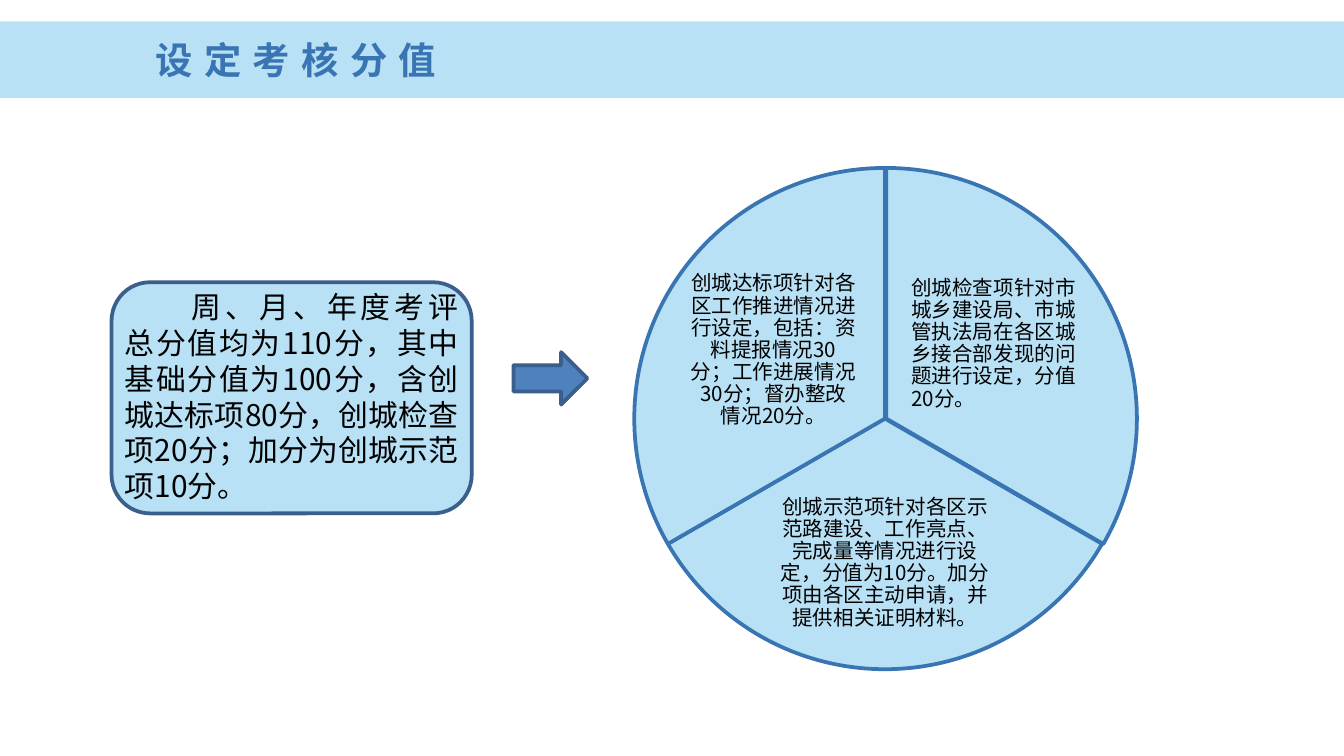
from pptx import Presentation
from pptx import util as u
from pptx.dml.color import RGBColor
from pptx.enum import shapes, text
from pptx.oxml.ns import qn
from lxml import etree

FONT = "Noto Sans CJK SC"
PALE, BLUE, NAVY, ARROW, BLACK = "B9E1F5", "3975B2", "3A5F8C", "4F81BD", "000000"
SHAPE = shapes.MSO_SHAPE
ALIGN = text.PP_ALIGN
SLIDE_WIDTH = 10
SLIDE_HEIGHT = SLIDE_WIDTH * 9 / 16

SUMMARY = ("周、月、年度考评总分值均为110分，其中基础分值为100分，含创城达标项80分，"
           "创城检查项20分；加分为创城示范项10分。")

# Start angle, sector shift, text box relative to the wheel, alignment, wording
SECTORS = [
    (270, 0.01, (2.04, 0.69, 1.27, 1.24), ALIGN.LEFT,
     "创城检查项针对市城乡建设局、市城管执法局在各区城乡接合部发现的问题进行设定，分值20分。"),
    (30, 0, (1.02, 2.36, 1.69, 1.16), ALIGN.CENTER,
     "创城示范项针对各区示范路建设、工作亮点、完成量等情况进行设定，分值为10分。"
     "加分项由各区主动申请，并提供相关证明材料。"),
    (150, 0, (0.4, 0.74, 1.27, 1.24), ALIGN.CENTER,
     "创城达标项针对各区工作推进情况进行设定，包括：资料提报情况30分；"
     "工作进展情况30分；督办整改情况20分。"),
]


def rgb(value):
    return RGBColor.from_string(value)


def inches(box):
    return [u.Inches(length) for length in box]


def add_figure(slide, preset, box, fill, line=None):
    figure = slide.shapes.add_shape(preset, *inches(box))
    figure.shadow.inherit = False
    figure.fill.solid()
    figure.fill.fore_color.rgb = rgb(fill)
    if line:
        figure.line.color.rgb = rgb(line)
        figure.line.width = u.Pt(2)
    else:
        figure.line.fill.background()
    return figure


def add_words(slide, box, words, size, color=BLACK, bold=False,
              frame_format=None, paragraph_format=None):
    """Add a text box; return its paragraph and its run properties."""
    frame = slide.shapes.add_textbox(*inches(box)).text_frame
    frame.word_wrap = True
    paragraph = frame.paragraphs[0]
    run = paragraph.add_run()
    run.text = words
    font_format = {"size": u.Pt(size), "bold": bold, "name": FONT}
    for target, values in ((frame, frame_format), (paragraph, paragraph_format),
                           (run.font, font_format)):
        for name, value in (values or {}).items():
            setattr(target, name, value)
    run.font.color.rgb = rgb(color)
    properties = run._r.get_or_add_rPr()
    properties.find(qn("a:latin")).addnext(
        etree.Element(qn("a:ea"), typeface=FONT))
    return paragraph, properties


def add_title_band(slide, box):
    left, top, _, _ = box
    add_figure(slide, SHAPE.RECTANGLE, box, PALE)
    _, properties = add_words(slide, (left + 1.06, top + 0.07, 2.52, 0.44),
                              "设定考核分值", 20, BLUE, True)
    properties.set("spc", "600")


def add_summary(slide, box):
    add_figure(slide, SHAPE.ROUNDED_RECTANGLE, box, PALE, NAVY)
    paragraph, _ = add_words(slide, box, SUMMARY, 16,
                             paragraph_format={"alignment": ALIGN.JUSTIFY})
    paragraph._p.get_or_add_pPr().set("indent", str(u.Inches(0.5)))


def add_wheel(slide, box):
    """Three equal sectors of a circle, each with its own text."""
    left, top, size, _ = box
    margins = dict.fromkeys(
        ("margin_left", "margin_top", "margin_right", "margin_bottom"), u.Inches(0.02))
    frame_format = {**margins, "vertical_anchor": text.MSO_ANCHOR.MIDDLE}
    for start, shift, (dx, dy, width, height), alignment, words in SECTORS:
        sector = add_figure(slide, SHAPE.PIE, (left + shift, top, size, size), PALE, BLUE)
        for index, angle in enumerate((start, (start + 120) % 360)):
            sector.adjustments[index] = angle * 0.6  # 60000ths of a degree / 100000
        paragraph, _ = add_words(
            slide, (left + dx, top + dy, width, height), words, 11,
            frame_format=frame_format,
            paragraph_format={"alignment": alignment, "line_spacing": 0.9})
        paragraph._p.get_or_add_pPr().set("hangingPunct", "0")


def main():
    deck = Presentation()
    deck.slide_width, deck.slide_height = inches((SLIDE_WIDTH, SLIDE_HEIGHT))
    slide = deck.slides.add_slide(deck.slide_layouts[6])
    add_title_band(slide, (0, 0.16, 10, 0.57))
    add_summary(slide, (0.83, 2.1, 2.68, 1.72))
    add_wheel(slide, (4.72, 1.25, 3.73, 3.73))
    add_figure(slide, SHAPE.RIGHT_ARROW, (3.82, 2.62, 0.55, 0.39), ARROW, NAVY)
    deck.save("out.pptx")


if __name__ == "__main__":
    main()
